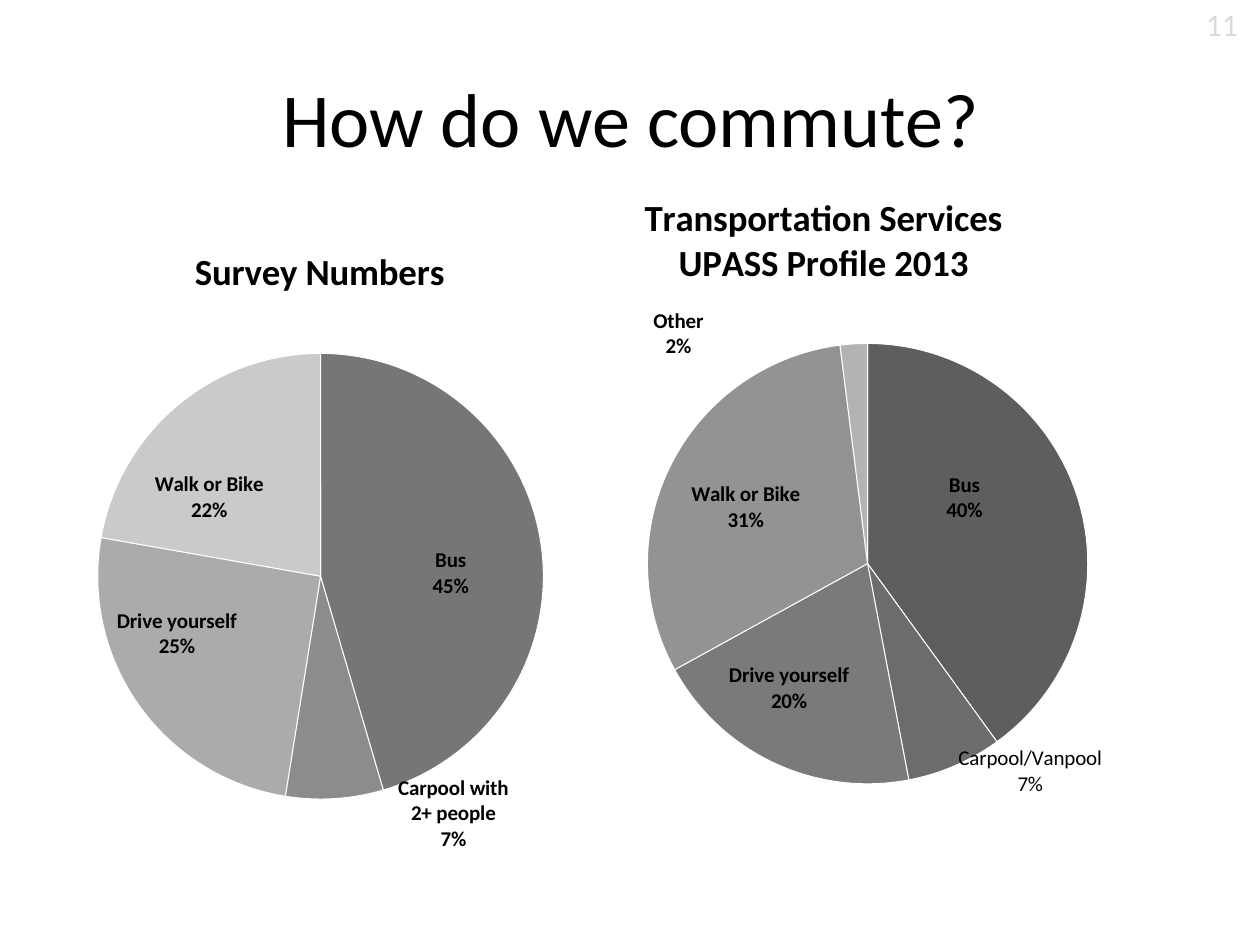
from lxml import etree
from pptx import Presentation
from pptx.chart.data import CategoryChartData
from pptx.dml.color import RGBColor
from pptx.enum.chart import XL_CHART_TYPE, XL_LABEL_POSITION
from pptx.enum.text import MSO_ANCHOR, PP_ALIGN
from pptx.oxml.ns import qn
from pptx.util import Cm, Pt

PIE = XL_CHART_TYPE.PIE
CENTER = XL_LABEL_POSITION.CENTER
MIDDLE = MSO_ANCHOR.MIDDLE
ALIGN_CENTER = PP_ALIGN.CENTER

FONT = "Calibri"
COLORS = {"text": "000000", "number": "D9D9D9", "edge": "FFFFFF"}

# Each slice: category, value, fill, label shift (share of chart size)
SURVEY = [
    ("Bus", 45, "767676", (0.03, 0.02)),
    ("Carpool with 2+ people", 7, "8C8C8C", (0.19, 0.19)),
    ("Drive yourself", 25, "ABABAB", (-0.08, -0.01)),
    ("Walk or Bike", 22, "CACACA", (-0.06, 0.01)),
]
UPASS = [
    ("Bus", 40, "5E5E5E", (-0.01, -0.05)),
    ("Carpool with 2+ people", 7, "6C6C6C", (0.15, 0.17)),
    ("Drive yourself", 20, "7A7A7A", (-0.04, 0.04)),
    ("Walk or Bike", 31, "939393", (-0.03, -0.01)),
    ("Other", 2, "B3B3B3", (-0.23, -0.19)),
]


def rgb(name):
    return RGBColor.from_string(COLORS.get(name, name))


def manual_layout(**values):
    """Return a c:layout element holding the given manual settings in order."""
    layout = etree.Element(qn("c:layout"))
    manual = etree.SubElement(layout, qn("c:manualLayout"))
    for tag, value in values.items():
        etree.SubElement(manual, qn(f"c:{tag}")).set("val", str(value))
    return layout


def replace_layout(parent, layout, before):
    """Put the layout in front of the first child with the tag `before`."""
    for old in parent.findall(qn("c:layout")):
        parent.remove(old)
    parent.find(qn(before)).addprevious(layout)


class Deck:
    def __init__(self, width, height):
        self.prs = Presentation()
        self.prs.slide_width, self.prs.slide_height = Cm(width), Cm(height)
        self.s = self.prs.slides.add_slide(self.prs.slide_layouts[5])

    def style(self, font, size, color="text", bold=False):
        font.name, font.size, font.bold = FONT, Pt(size), bold
        font.color.rgb = rgb(color)

    def centered(self, tf, text, size, bold=False):
        tf.text = text
        for p in tf.paragraphs:
            p.alignment = ALIGN_CENTER
            self.style(p.font, size, bold=bold)

    def title(self, text, x, y, w, h):
        sp = self.s.shapes.title
        sp.left, sp.top, sp.width, sp.height = Cm(x), Cm(y), Cm(w), Cm(h)
        sp.text_frame.vertical_anchor = MIDDLE
        self.centered(sp.text_frame, text, 58)

    def text(self, text, x, y, w, h, size, color):
        tf = self.s.shapes.add_textbox(Cm(x), Cm(y), Cm(w), Cm(h)).text_frame
        tf.word_wrap = True
        tf.text = text
        self.style(tf.paragraphs[0].font, size, color)

    def pie(self, title, slices, box, title_at, plot_box):
        data = CategoryChartData()
        data.categories = [row[0] for row in slices]
        data.add_series(title.replace("\n", " "), [row[1] for row in slices])
        chart = self.s.shapes.add_chart(PIE, *map(Cm, box), data).chart
        chart.has_legend = False
        self.style(chart.font, 10)

        chart.has_title = True
        self.centered(chart.chart_title.text_frame, title, 28, bold=True)
        x, y = title_at
        replace_layout(chart.element.find(".//" + qn("c:title")),
                       manual_layout(xMode="edge", yMode="edge", x=x, y=y),
                       "c:overlay")
        x, y, w, h = plot_box
        replace_layout(chart.element.find(".//" + qn("c:plotArea")),
                       manual_layout(layoutTarget="inner", xMode="edge",
                                     yMode="edge", x=x, y=y, w=w, h=h),
                       "c:pieChart")

        plot = chart.plots[0]
        plot.vary_by_categories = True
        self.slices(plot.series[0], slices)
        return plot.series[0]

    def slices(self, series, slices):
        """Colour the slices and place their category and percent labels."""
        labels = series.data_labels
        labels.show_value = False
        labels.show_category_name = labels.show_percentage = True
        labels.number_format, labels.number_format_is_linked = "0%", False
        self.style(labels.font, 16, bold=True)
        for i, (_, _, color, _) in enumerate(slices):
            point = series.points[i]
            point.format.fill.solid()
            point.format.fill.fore_color.rgb = rgb(color)
            point.format.line.color.rgb = rgb("edge")
            point.format.line.width = Pt(0.75)
            self.style(point.data_label.font, 16, bold=True)
            point.data_label.position = CENTER
        root = labels._element
        for leader in root.findall(qn("c:showLeaderLines")):
            leader.set("val", "0")
        shown = {"showVal": "0", "showCatName": "1", "showPercent": "1"}
        for label, row in zip(root.findall(qn("c:dLbl")), slices):
            for tag, value in shown.items():
                label.find(qn(f"c:{tag}")).set("val", value)
            x, y = row[3]
            label.find(qn("c:idx")).addnext(manual_layout(x=x, y=y))
            separator = etree.SubElement(label, qn("c:separator"))
            separator.text = "\n"

    def custom_label(self, series, index, text, bold):
        tf = series.points[index].data_label.text_frame
        self.centered(tf, text, 16, bold=bold)
        for p in tf.paragraphs:
            for r in p.runs:
                self.style(r.font, 16, bold=bold)


def main():
    deck = Deck(33.83, 25.37)
    deck.title("How do we commute?", 1.7, 1.02, 30.45, 4.22)
    survey = deck.pie("Survey Numbers", SURVEY, (-0.46, 5.56, 17.78, 17.86),
                      (0.31, 0.05), (0.17, 0.22, 0.68, 0.67))
    deck.custom_label(survey, 1, "Carpool with\n2+ people\n7%", True)
    upass = deck.pie("Transportation Services\nUPASS Profile 2013", UPASS,
                     (12.55, 5, 21.28, 16.89),
                     (0.22, 0.01), (0.22, 0.25, 0.57, 0.7))
    deck.custom_label(upass, 1, "Carpool/Vanpool\n7%", False)
    deck.text("11", 32.13, 0, 1.7, 1.27, 24, "number")
    deck.prs.save("out.pptx")


if __name__ == "__main__":
    main()
